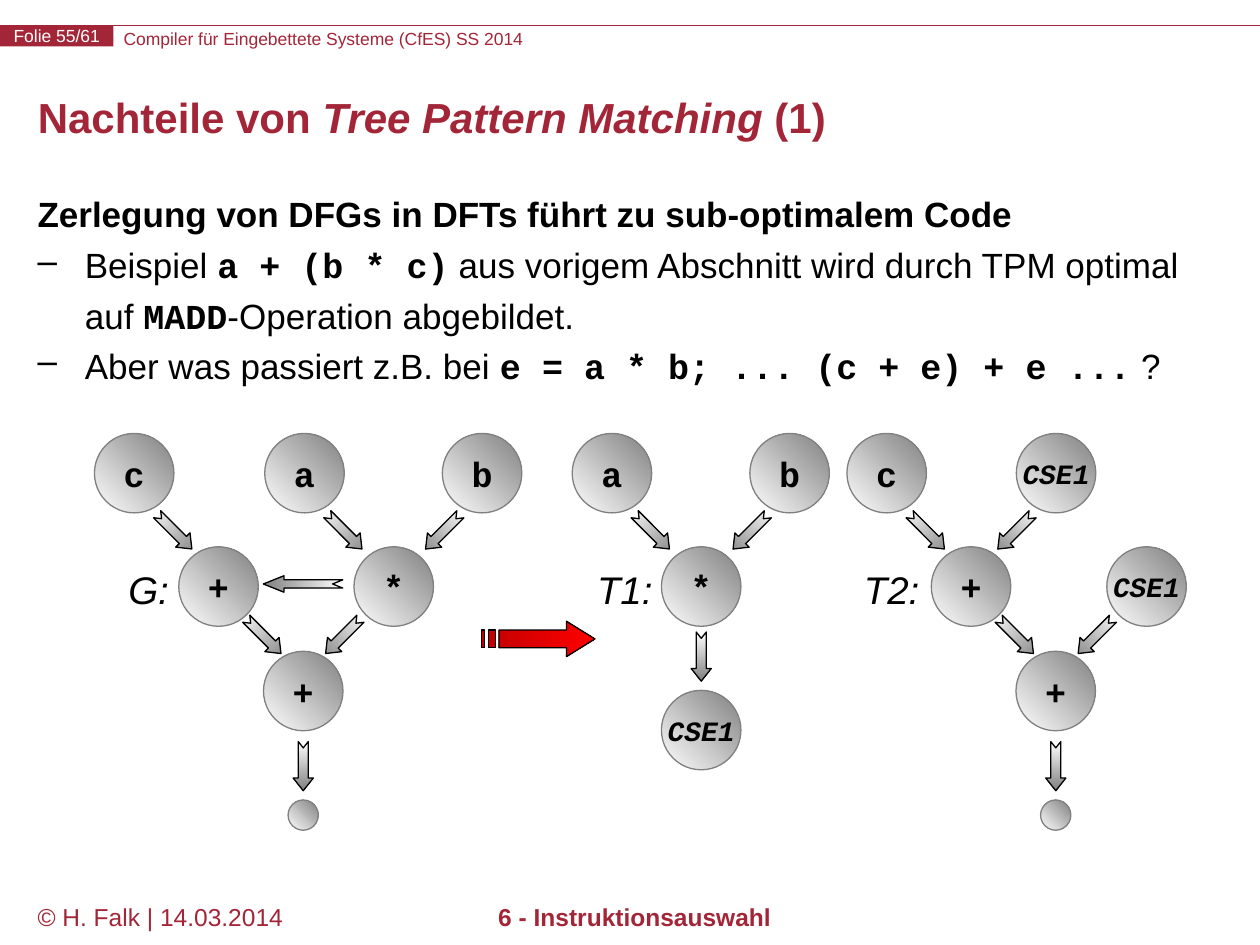
from dataclasses import dataclass

from lxml.etree import SubElement
from pptx import Presentation
from pptx.dml.color import RGBColor
from pptx.enum.shapes import MSO_CONNECTOR as Connector, MSO_SHAPE as Shape
from pptx.enum.text import MSO_ANCHOR as Anchor, MSO_AUTO_SIZE as AutoSize, PP_ALIGN as Align
from pptx.oxml.ns import qn
from pptx.util import Pt


@dataclass(frozen=True)
class Theme:
    accent: str = "A32638"
    ink: str = "000000"
    paper: str = "FFFFFF"
    gray: str = "808080"
    dark_red: str = "C00000"
    red: str = "FF0000"
    sans: str = "Arial"
    mono: str = "Courier New"
    header_size: float = 10
    footer_size: float = 14
    title_size: float = 24
    body_size: float = 20
    label_size: float = 22
    small_node_size: float = 16
    line_width: float = 0.75
    node_diameter: float = 45.4
    dot_diameter: float = 17.3


class SlideBuilder:
    """Holds the theme and the current slide; all lengths are in points."""

    def __init__(self, slide, theme):
        self.slide = slide
        self.shapes = slide.shapes
        self.theme = theme

    def run(self, paragraph, text, size, color, font=None, bold=False, italic=False):
        run = paragraph.add_run()
        run.text = text
        run.font.name = font or self.theme.sans
        run.font.size = Pt(size)
        run.font.bold = bold
        run.font.italic = italic
        run.font.color.rgb = RGBColor.from_string(color)

    def frame(self, shape, inset=True, wrap=True, anchor=Anchor.TOP):
        frame = shape.text_frame
        frame.word_wrap = wrap
        frame.auto_size = AutoSize.NONE
        frame.vertical_anchor = anchor
        if not inset:
            frame.margin_left = frame.margin_right = 0
            frame.margin_top = frame.margin_bottom = 0
        return frame

    def text_box(self, left, top, width, height, **options):
        box = self.shapes.add_textbox(Pt(left), Pt(top), Pt(width), Pt(height))
        return self.frame(box, **options)

    def text(self, box, text, size, color, align=Align.LEFT, inset=True, **style):
        paragraph = self.text_box(*box, inset=inset).paragraphs[0]
        paragraph.alignment = align
        self.run(paragraph, text, size, color, **style)

    def title(self, box, parts):
        title = self.shapes.title
        title.left, title.top, title.width, title.height = map(Pt, box)
        paragraph = self.frame(title, anchor=Anchor.MIDDLE).paragraphs[0]
        paragraph.alignment = Align.LEFT
        paragraph.line_spacing = Pt(24)
        for text, italic in parts:
            self.run(paragraph, text, self.theme.title_size, self.theme.accent,
                     bold=True, italic=italic)

    def body_paragraph(self, paragraph, parts, spacing, bullet=None):
        paragraph.line_spacing = spacing
        properties = paragraph._p.get_or_add_pPr()
        properties.set("marL", str(Pt(27)))
        properties.set("indent", str(Pt(-27)))
        if bullet:
            SubElement(properties, qn("a:buChar")).set("char", bullet)
        for text, font, bold in parts:
            self.run(paragraph, text, self.theme.body_size, self.theme.ink, font, bold)

    def rule(self, left, right, y):
        line = self.shapes.add_connector(Connector.STRAIGHT, Pt(left), Pt(y), Pt(right), Pt(y))
        line.line.color.rgb = RGBColor.from_string(self.theme.accent)
        line.line.width = Pt(self.theme.line_width)
        SubElement(line._element.spPr, qn("a:effectLst"))

    def tag(self, box, text):
        shape = self.shapes.add_shape(Shape.RECTANGLE, *map(Pt, box))
        shape.shadow.inherit = False
        shape.fill.solid()
        shape.fill.fore_color.rgb = RGBColor.from_string(self.theme.accent)
        shape.line.fill.background()
        self.center_text(shape, text, self.theme.header_size, self.theme.paper)

    def center_text(self, shape, text, size, color, **style):
        frame = self.frame(shape, inset=False, wrap=False, anchor=Anchor.MIDDLE)
        frame.paragraphs[0].alignment = Align.CENTER
        self.run(frame.paragraphs[0], text, size, color, **style)

    def paint(self, shape, start, end, outline, angle=0):
        shape.shadow.inherit = False
        shape.fill.gradient()
        shape.fill.gradient_angle = angle
        for stop, color in zip(shape.fill.gradient_stops, (start, end)):
            stop.color.rgb = RGBColor.from_string(color)
        shape.line.color.rgb = RGBColor.from_string(outline)
        shape.line.width = Pt(self.theme.line_width)

    def centered_shape(self, kind, x, y, width, height):
        return self.shapes.add_shape(kind, Pt(x - width / 2), Pt(y - height / 2),
                                     Pt(width), Pt(height))

    def circle(self, x, y, diameter):
        circle = self.centered_shape(Shape.OVAL, x, y, diameter, diameter)
        self.paint(circle, self.theme.paper, self.theme.gray, self.theme.gray, angle=45)
        return circle

    def node(self, text, x, y):
        theme = self.theme
        named = len(text) > 1
        size = theme.small_node_size if named else theme.body_size
        self.center_text(self.circle(x, y, theme.node_diameter), text, size, theme.ink,
                         font=theme.mono, bold=True, italic=named)

    def arrow(self, x, y, rotation, length=28.1, thickness=11.5, head=0.63):
        arrow = self.centered_shape(Shape.NOTCHED_RIGHT_ARROW, x, y, length, thickness)
        arrow.adjustments[0], arrow.adjustments[1] = 0.5, head
        arrow.rotation = rotation
        self.paint(arrow, self.theme.paper, self.theme.gray, self.theme.ink)

    def operator(self, text, x, y, reach, sides=(-1, 1)):
        """An operator node with slanted arrows coming in from above."""
        for side in sides:
            self.arrow(x + side * reach, y - 31.4, 90 + 45 * side)
        self.node(text, x, y)

    def label(self, text, x, y):
        frame = self.text_box(x - 24, y - 13.3, 48, 26.6, inset=False, wrap=False)
        frame.paragraphs[0].alignment = Align.CENTER
        self.run(frame.paragraphs[0], text, self.theme.label_size, self.theme.ink, italic=True)

    def striped_arrow(self, left, top, width, height):
        def place(points):
            return [(Pt(left + width * x), Pt(top + height * y)) for x, y in points]

        head = place([(3/4, 0), (3/4, 1/4), (5/32, 1/4), (5/32, 3/4), (3/4, 3/4), (3/4, 1), (1, 1/2)])
        builder = self.shapes.build_freeform(*head[0])
        builder.add_line_segments(head[1:])
        for start, end in ((2/32, 4/32), (0, 1/32)):
            stripe = place([(start, 1/4), (start, 3/4), (end, 3/4), (end, 1/4)])
            builder.move_to(*stripe[0])
            builder.add_line_segments(stripe[1:])
        self.paint(builder.convert_to_shape(), self.theme.dark_red, self.theme.red, self.theme.ink)


# Centre lines of the node rows
LEAF_ROW, OPERATOR_ROW, RESULT_ROW, CSE_ROW, DOT_ROW = 270.4, 335.2, 394.9, 417.2, 465.8


def draw_product(builder, x):
    builder.node("a", x - 51, LEAF_ROW)
    builder.node("b", x + 50.5, LEAF_ROW)
    builder.operator("*", x, OPERATOR_ROW, reach=28.1)


def draw_result(builder, x):
    builder.operator("+", x, RESULT_ROW, reach=22.7)
    builder.arrow(x, RESULT_ROW + 42.9, 90)
    builder.circle(x, DOT_ROW, builder.theme.dot_diameter)


def draw_sum(builder, x, sides):
    builder.node("c", x - 48.2, LEAF_ROW)
    builder.operator("+", x, OPERATOR_ROW, reach=25.2, sides=sides)
    draw_result(builder, x + 48.4)


def main():
    presentation = Presentation()
    presentation.slide_width, presentation.slide_height = Pt(720), Pt(540)
    theme = Theme()
    builder = SlideBuilder(presentation.slides.add_slide(presentation.slide_layouts[5]), theme)

    # Header and footer
    builder.rule(0, 720, 14.4)
    builder.text((70.6, 15.8, 475, 12.2), "Compiler für Eingebettete Systeme (CfES) SS 2014",
                 theme.header_size, theme.accent, inset=False)
    builder.tag((0, 14.4, 64.8, 12.2), "Folie 55/61")
    builder.text((14.4, 512, 158, 27), "© H. Falk | 14.03.2014", theme.footer_size, theme.accent)
    builder.text((144.7, 512, 436, 27), "6 - Instruktionsauswahl", theme.footer_size,
                 theme.accent, align=Align.CENTER, bold=True)

    # Title and body
    builder.title((14.4, 43.2, 692, 51.8),
                  [("Nachteile von ", False), ("Tree Pattern Matching", True), (" (1)", False)])
    sans, mono = theme.sans, theme.mono
    body = builder.text_box(14.4, 109.4, 692, 125)
    builder.body_paragraph(body.paragraphs[0], [
        ("Zerlegung von DFGs in DFTs führt zu sub-optimalem Code", sans, True)], 0.9)
    for parts in (
        [("Beispiel ", sans, False), ("a + (b * c)", mono, True),
         (" aus vorigem Abschnitt wird durch TPM optimal auf ", sans, False),
         ("MADD", mono, True), ("-Operation abgebildet.", sans, False)],
        [("Aber was passiert z.B. bei ", sans, False),
         ("e = a * b; ... (c + e) + e ...", mono, True), (" ?", sans, False)],
    ):
        builder.body_paragraph(body.add_paragraph(), parts, 1.2, bullet="–")

    # Graph G
    draw_product(builder, 225)
    draw_sum(builder, 124.9, sides=(-1,))
    builder.arrow(173.2, 333.7, 180, length=45.4, thickness=9.4, head=1.25)

    # Tree T1
    draw_product(builder, 400.7)
    builder.arrow(400.7, OPERATOR_ROW + 40, 90)
    builder.node("CSE1", 400.7, CSE_ROW)

    # Tree T2
    draw_sum(builder, 554.9, sides=(-1, 1))
    builder.node("CSE1", 603.5, LEAF_ROW)
    builder.node("CSE1", 655.2, OPERATOR_ROW)

    # Labels and transition arrow
    for text, x in (("G:", 84.9), ("T1:", 357), ("T2:", 509.5)):
        builder.label(text, x, 336.6)
    builder.striped_arrow(275, 355, 65, 20.2)

    presentation.save("out.pptx")


if __name__ == "__main__":
    main()
